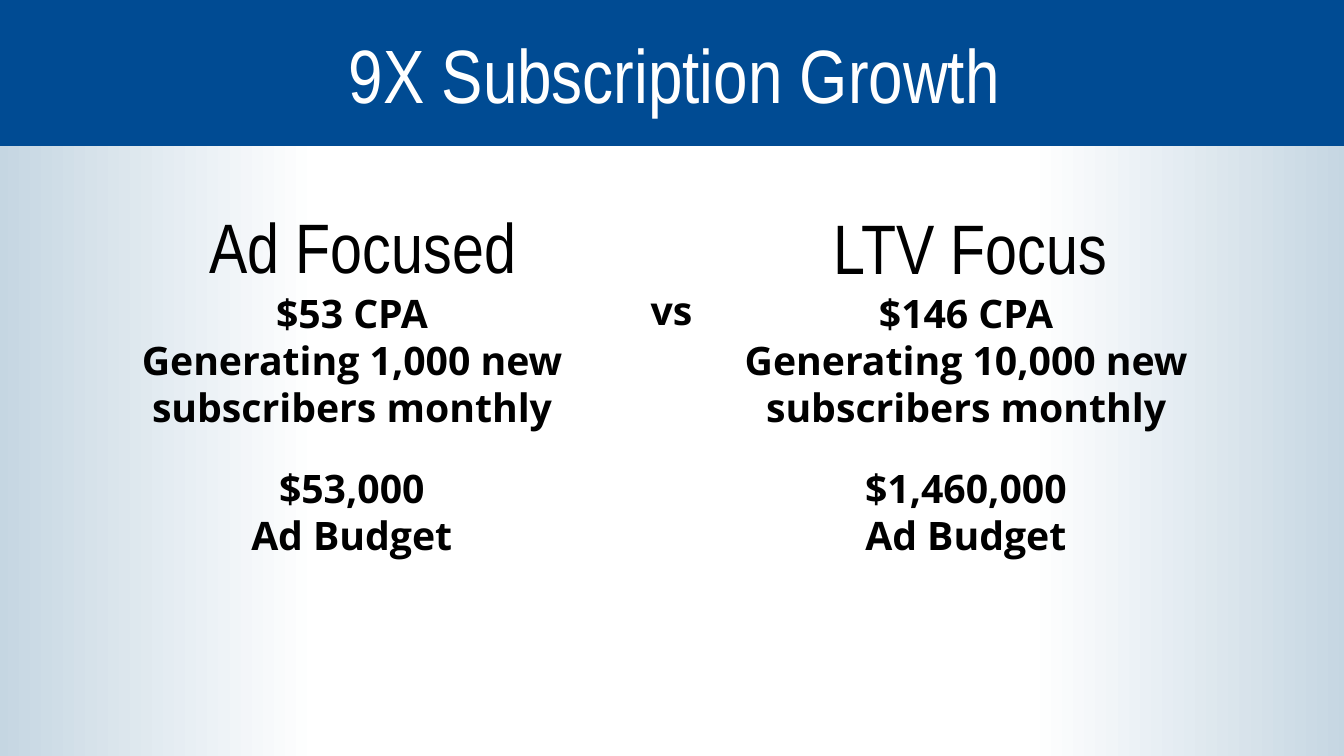
from dataclasses import dataclass

import pptx
import pptx.dml.color
import pptx.enum.shapes
import pptx.enum.text
import pptx.util

Cm = pptx.util.Cm
RGBColor = pptx.dml.color.RGBColor
Anchor = pptx.enum.text.MSO_ANCHOR

BLUE = RGBColor(0x00, 0x4B, 0x93)
MIST = RGBColor(0xC5, 0xD6, 0xE2)
WHITE = RGBColor(0xFF, 0xFF, 0xFF)
BLACK = RGBColor(0x00, 0x00, 0x00)


@dataclass(frozen=True)
class Style:
    font: str
    size: int
    color: RGBColor = BLACK
    bold: bool = False
    side_inset: float = 0.13
    line_spacing: float = 1.0


TITLE = Style("Arial Narrow", 54, WHITE, line_spacing=0.9)
HEADING = Style("Arial Narrow", 50, side_inset=0.25)
FIGURES = Style("Open Sans", 28, bold=True)


@dataclass(frozen=True)
class Area:
    """A rectangle in centimetres."""
    left: float
    top: float
    width: float
    height: float

    def lengths(self) -> tuple:
        return Cm(self.left), Cm(self.top), Cm(self.width), Cm(self.height)


@dataclass(frozen=True)
class Strategy:
    heading: str
    heading_area: Area
    results: tuple[str, ...]
    results_area: Area
    budget: str
    budget_area: Area


STRATEGIES = (
    Strategy(
        "Ad Focused", Area(3.84, 5, 10.62, 2.39),
        ("$53 CPA", "Generating 1,000 new subscribers monthly"),
        Area(3.28, 7.16, 11.18, 3.84),
        "$53,000", Area(5.69, 11.56, 6.35, 2.64),
    ),
    Strategy(
        "LTV Focus", Area(19.15, 5.03, 10.62, 2.39),
        ("$146 CPA", "Generating 10,000 new subscribers monthly"),
        Area(16.94, 7.16, 14.81, 3.84),
        "$1,460,000", Area(21.29, 11.56, 6.1, 2.64),
    ),
)


def add_rectangle(slide, area: Area):
    """Add a rectangle without outline or shadow, ready to be filled."""
    rectangle = slide.shapes.add_shape(
        pptx.enum.shapes.MSO_SHAPE.RECTANGLE, *area.lengths())
    rectangle.shadow.inherit = False
    rectangle.line.fill.background()
    return rectangle


def add_edge_fade(slide, left: float, angle: int) -> None:
    """Fade from mist to white in the direction of the angle."""
    fade = add_rectangle(slide, Area(left, -0.03, 8.1, 19.13)).fill
    fade.gradient()
    fade.gradient_angle = angle
    for stop, color, position in zip(fade.gradient_stops, (MIST, WHITE), (0, 1)):
        stop.color.rgb = color
        stop.position = position


def add_text(slide, area: Area, paragraphs: tuple[str, ...], style: Style,
             anchor: Anchor = Anchor.TOP, wrap: bool = True) -> None:
    """Add centred paragraphs; a newline inside one is a line break."""
    frame = slide.shapes.add_textbox(*area.lengths()).text_frame
    frame.word_wrap = wrap
    frame.vertical_anchor = anchor
    frame.margin_left = frame.margin_right = Cm(style.side_inset)
    frame.margin_top = frame.margin_bottom = Cm(0.13)
    for index, text in enumerate(paragraphs):
        paragraph = frame.add_paragraph() if index else frame.paragraphs[0]
        paragraph.alignment = pptx.enum.text.PP_ALIGN.CENTER
        paragraph.line_spacing = style.line_spacing
        for line_index, line in enumerate(text.split("\n")):
            if line_index:
                paragraph.add_line_break()
            run = paragraph.add_run()
            run.text = line
            run.font.name = style.font
            run.font.size = pptx.util.Pt(style.size)
            run.font.bold = style.bold
            run.font.color.rgb = style.color


def add_strategy(slide, strategy: Strategy) -> None:
    add_text(slide, strategy.heading_area, (strategy.heading,), HEADING)
    add_text(slide, strategy.results_area, strategy.results, FIGURES)
    add_text(slide, strategy.budget_area,
             (f"{strategy.budget}\nAd Budget",), FIGURES)


def main() -> None:
    presentation = pptx.Presentation()
    presentation.slide_width = Cm(33.87)
    presentation.slide_height = Cm(19.05)
    slide = presentation.slides.add_slide(presentation.slide_layouts[6])

    add_edge_fade(slide, left=25.93, angle=180)
    add_edge_fade(slide, left=-0.08, angle=0)

    banner = add_rectangle(slide, Area(-0.03, 0, 34.04, 3.68))
    banner.fill.solid()
    banner.fill.fore_color.rgb = BLUE
    add_text(slide, Area(2.39, 0.15, 29.21, 3.68),
             ("9X Subscription Growth",), TITLE, Anchor.MIDDLE)

    for strategy in STRATEGIES:
        add_strategy(slide, strategy)
    add_text(slide, Area(16.26, 7.09, 1.32, 1.45), ("vs",), FIGURES, wrap=False)

    presentation.save("out.pptx")


if __name__ == "__main__":
    main()
